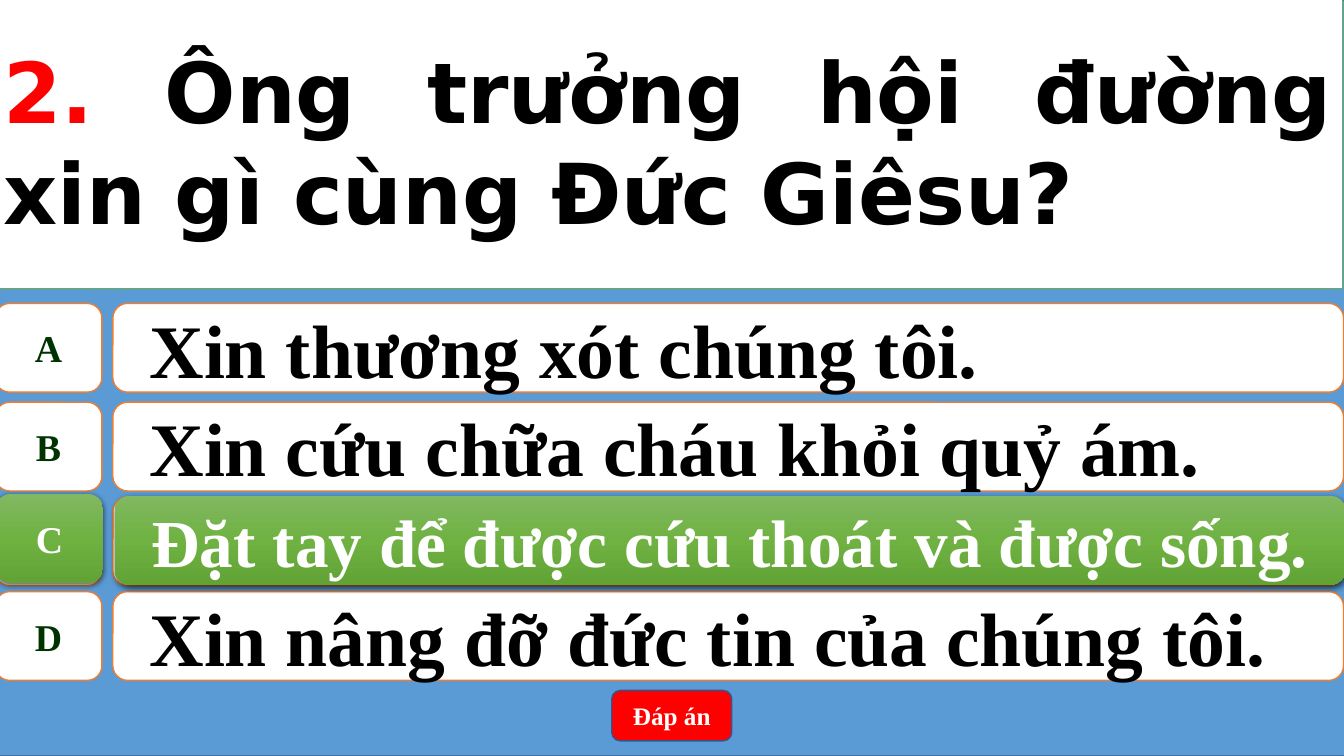
"""Build a quiz slide with four choices and the right one lit up."""
from copy import deepcopy

from lxml.etree import SubElement as Sub
from pptx import Presentation
from pptx.dml.color import RGBColor as RGB
from pptx.enum.shapes import MSO_SHAPE as Kind
from pptx.enum.text import MSO_ANCHOR as Anchor, MSO_AUTO_SIZE as Fit, PP_ALIGN as Align
from pptx.oxml.ns import qn
from pptx.util import Pt

BLUE = RGB(0x5B, 0x9B, 0xD5)
NAVY = RGB(0x43, 0x73, 0x9E)
INDIGO = RGB(0x32, 0x54, 0x91)
ORANGE = RGB(0xED, 0x7D, 0x31)
GREEN = RGB(0x70, 0xAD, 0x47)
FOREST = RGB(0x00, 0x33, 0x00)
RED = RGB(0xFF, 0x00, 0x00)
WHITE = RGB(0xFF, 0xFF, 0xFF)
BLACK = RGB(0x00, 0x00, 0x00)
SHADES = (RGB(0x81, 0xB8, 0x61), RGB(0x6F, 0xB2, 0x42), RGB(0x62, 0xA3, 0x36))

SERIF = "Times New Roman"
SANS = "DejaVu Sans"
HEIGHT = 63.4
BADGE = (-3.6, 76.4)
BAR = (80.6, 879.1)
CHOICES = (
    ("A", "Xin thương xót chúng tôi.", 216.7),
    ("B", "Xin cứu chữa cháu khỏi quỷ ám.", 287.3),
    ("", "", 355),
    ("D", "Xin nâng đỡ đức tin của chúng tôi.", 422.6),
)


def place(shape, box):
    """Move and size a shape in points."""
    for name, value in zip(("left", "top", "width", "height"), box):
        setattr(shape, name, Pt(value))


def paint(shape, fill, line):
    """Give a shape a plain fill and a thin line."""
    shape.fill.solid()
    shape.fill.fore_color.rgb = fill
    shape.line.color.rgb = line
    shape.line.width = Pt(1)


def glow(shape):
    """Give a shape the green blend and a soft shadow."""
    shape.fill.gradient()
    shape.fill.gradient_angle = 270
    shape.line.fill.background()
    props = shape._element.spPr
    stops = props.find(qn("a:gradFill")).find(qn("a:gsLst"))
    stops.insert(1, deepcopy(stops[0]))
    for stop, shade, part in zip(shape.fill.gradient_stops, SHADES, (0, 0.5, 1)):
        stop.color.rgb = shade
        stop.position = part
    for stop in stops:
        for tint in list(stop[0]):
            stop[0].remove(tint)
    cast = Sub(props.find(qn("a:effectLst")), qn("a:outerShdw"), blurRad=str(Pt(4.5)),
               dist=str(Pt(1.5)), dir="5400000", algn="ctr", rotWithShape="0")
    tone = Sub(cast, qn("a:srgbClr"), val="000000")
    Sub(tone, qn("a:alpha"), val="63000")


def write(para, text, size, color, face=SERIF):
    """Add one bold run to a paragraph."""
    run = para.add_run()
    run.text = text
    run.font.color.rgb = color
    style = {"size": Pt(size), "name": face, "bold": True}
    for name, value in style.items():
        setattr(run.font, name, value)


def block(slide, kind, box, text="", size=27, color=FOREST, wrap=True):
    """Add a shape with centred text and no shadow."""
    shape = slide.shapes.add_shape(kind, *(Pt(value) for value in box))
    shape.shadow.inherit = False
    frame = shape.text_frame
    frame.word_wrap = wrap
    frame.vertical_anchor = Anchor.MIDDLE
    para = frame.paragraphs[0]
    para.alignment = Align.CENTER
    if text:
        write(para, text, size, color)
    return shape


def choice(slide, label, text, top, size=54, lit=False, shift=0):
    """Add a letter badge and its answer bar."""
    ink, dark = (WHITE, WHITE) if lit else (FOREST, BLACK)
    badge = block(slide, Kind.FLOWCHART_ALTERNATE_PROCESS,
                  (BADGE[0] + shift / 2, top - shift, BADGE[1], HEIGHT),
                  label, 27, ink, False)
    bar = block(slide, Kind.ROUNDED_RECTANGLE,
                (BAR[0] + shift, top, BAR[1], HEIGHT), text, size, dark)
    para = bar.text_frame.paragraphs[0]
    para.alignment = Align.LEFT
    props = para._p.get_or_add_pPr()
    props.set("marL", str(Pt(36)))
    props.set("indent", str(Pt(-20)))
    for shape in (badge, bar):
        if lit:
            glow(shape)
        else:
            paint(shape, WHITE, ORANGE)


def ask(slide):
    """Format the title as the question panel."""
    title = slide.shapes.title
    place(title, (-5, -5, 964.1, 211))
    paint(title, WHITE, GREEN)
    frame = title.text_frame
    style = {"word_wrap": True, "auto_size": Fit.NONE, "vertical_anchor": Anchor.MIDDLE}
    for name, value in style.items():
        setattr(frame, name, value)
    para = frame.paragraphs[0]
    para.alignment = Align.JUSTIFY
    para.line_spacing = 1.0
    write(para, "2. ", 60, RED, SANS)
    write(para, "Ông trưởng hội đường xin gì cùng Đức Giêsu?", 60, BLACK, SANS)


def main():
    """Build and save the slide."""
    deck = Presentation()
    deck.slide_width, deck.slide_height = Pt(960), Pt(540)
    slide = deck.slides.add_slide(deck.slide_layouts[5])
    ground = block(slide, Kind.RECTANGLE, (-3.6, 0, 964.1, 540))
    paint(ground, BLUE, NAVY)
    slide.shapes._spTree.insert(2, ground._element)
    ask(slide)
    for label, text, top in CHOICES:
        choice(slide, label, text, top)
    choice(slide, "C", "Đặt tay để được cứu thoát và được sống.", 354.2, 48, True, 1.4)
    button = block(slide, Kind.ROUNDED_RECTANGLE, (437, 493.2, 85.7, 36),
                   "Đáp án", 18, WHITE)
    paint(button, RED, INDIGO)
    deck.save("out.pptx")


if __name__ == "__main__":
    main()
